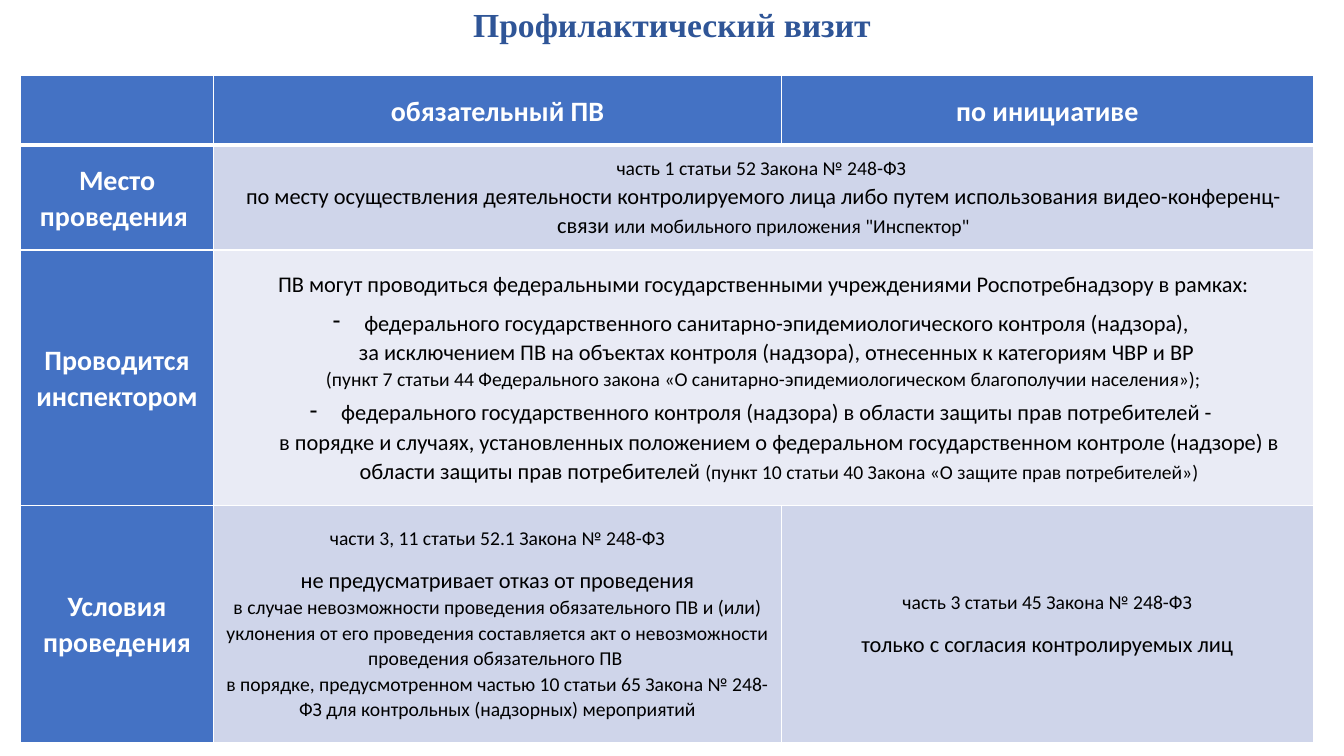
from dataclasses import dataclass, field

from lxml.etree import SubElement
from pptx import Presentation
from pptx.dml.color import RGBColor
from pptx.enum.text import MSO_ANCHOR, PP_ALIGN
from pptx.oxml.ns import qn
from pptx.util import Cm, Pt


@dataclass(frozen=True)
class Theme:
    white: str = "FFFFFF"
    blue: str = "4472C4"
    bands: tuple = ("CFD5EA", "E9EBF5")
    thin: float = 1
    thick: float = 3
    fonts: dict = field(default_factory=lambda: {
        "title": ("Times New Roman", 24, "2F5597", True),
        "head": ("Calibri", 20, "FFFFFF", True),
        "body": ("Calibri", 16, "000000", False),
        "note": ("Calibri", 14, "000000", False),
    })


@dataclass(frozen=True)
class Line:
    spans: tuple
    before: float = 0
    dash: bool = False


def head(text):
    return Line((("head", text),))


def body(text, **options):
    return Line((("body", text),), **options)


def note(text, **options):
    return Line((("note", text),), **options)


def apply(target, values):
    for name, value in values.items():
        setattr(target, name, value)


class SlideBuilder:
    def __init__(self, page, theme):
        self.page = page
        self.theme = theme

    def add_span(self, para, style, text):
        name, size, color, bold = self.theme.fonts[style]
        for index, part in enumerate(text.split("\n")):
            if index:
                para.add_line_break()
            span = para.add_run()
            span.text = part
            apply(span.font, {"name": name, "size": Pt(size), "bold": bold})
            span.font.color.rgb = RGBColor.from_string(color)

    def add_dash(self, para):
        properties = para._p.get_or_add_pPr()
        properties.set("marL", str(Cm(0.79)))
        properties.set("indent", str(Cm(-0.79)))
        SubElement(properties, qn("a:buChar")).set("char", "-")

    def add_lines(self, frame, lines, spacing):
        for index, line in enumerate(lines):
            para = frame.add_paragraph() if index else frame.paragraphs[0]
            apply(para, {"alignment": PP_ALIGN.CENTER, "line_spacing": spacing,
                         "space_before": Pt(line.before)})
            if line.dash:
                self.add_dash(para)
            for style, text in line.spans:
                self.add_span(para, style, text)

    def add_title(self, text, left, top, width, height):
        box = self.page.shapes.add_textbox(Cm(left), Cm(top), Cm(width), Cm(height))
        apply(box.text_frame, {"word_wrap": True, "vertical_anchor": MSO_ANCHOR.MIDDLE})
        self.add_lines(box.text_frame, [Line((("title", text),))], 0.9)

    def add_borders(self, cell, row):
        thin, thick = self.theme.thin, self.theme.thick
        widths = {"L": thin, "R": thin,
                  "T": thick if row == 1 else thin,
                  "B": thick if row == 0 else thin}
        properties = cell._tc.get_or_add_tcPr()
        for side, width in widths.items():
            border = SubElement(properties, qn(f"a:ln{side}"))
            border.set("w", str(Pt(width)))
            fill = SubElement(border, qn("a:solidFill"))
            SubElement(fill, qn("a:srgbClr")).set("val", self.theme.white)

    def style_cell(self, cell, row, column):
        apply(cell, {"vertical_anchor": MSO_ANCHOR.MIDDLE,
                     "margin_left": Cm(0.16), "margin_right": Cm(0.16),
                     "margin_top": 0, "margin_bottom": 0})
        self.add_borders(cell, row)
        is_header = row == 0 or column == 0
        color = self.theme.blue if is_header else self.theme.bands[(row - 1) % 2]
        cell.fill.solid()
        cell.fill.fore_color.rgb = RGBColor.from_string(color)

    def add_table(self, rows, left, top, widths, heights):
        table = self.page.shapes.add_table(
            len(heights), len(widths), Cm(left), Cm(top),
            Cm(sum(widths)), Cm(sum(heights))).table
        apply(table, {"first_row": True, "first_col": True})
        for column, width in zip(table.columns, widths):
            column.width = Cm(width)
        for row, height in zip(table.rows, heights):
            row.height = Cm(height)
        for row, contents in enumerate(rows):
            for column in range(len(widths)):
                self.style_cell(table.cell(row, column), row, column)
            for column, lines in enumerate(contents):
                self.add_lines(table.cell(row, column).text_frame, lines, 1.07)
            if len(contents) < len(widths):
                table.cell(row, len(contents) - 1).merge(table.cell(row, len(widths) - 1))


VISIT_ROWS = [
    [[], [head("обязательный ПВ")], [head("по инициативе")]],
    [
        [head("Место проведения ")],
        [
            note("часть 1 статьи 52 Закона № 248-ФЗ "),
            Line((
                ("body", "по месту осуществления деятельности контролируемого лица либо "
                         "путем использования видео-конференц-связи "),
                ("note", 'или мобильного приложения "Инспектор"'),
            )),
        ],
    ],
    [
        [head("Проводится"), head("инспектором")],
        [
            body("ПВ могут проводиться федеральными государственными учреждениями "
                 "Роспотребнадзору в рамках:"),
            body("федерального государственного санитарно-эпидемиологического контроля "
                 "(надзора), \nза исключением ПВ на объектах контроля (надзора), "
                 "отнесенных к категориям ЧВР и ВР ", before=6.5, dash=True),
            note("(пункт 7 статьи 44 Федерального закона «О санитарно-эпидемиологическом "
                 "благополучии населения»);"),
            Line((
                ("body", "федерального государственного контроля (надзора) в области защиты "
                         "прав потребителей - \nв порядке и случаях, установленных положением "
                         "о федеральном государственном контроле (надзоре) в области защиты "
                         "прав потребителей "),
                ("note", "(пункт 10 статьи 40 Закона «О защите прав потребителей»)"),
            ), before=4, dash=True),
        ],
    ],
    [
        [head("Условия проведения")],
        [
            note("части 3, 11 статьи 52.1 Закона № 248-ФЗ"),
            body("не предусматривает отказ от проведения", before=10.5),
            note("в случае невозможности проведения обязательного ПВ и (или) уклонения от "
                 "его проведения составляется акт о невозможности проведения "
                 "обязательного ПВ "),
            note("в порядке, предусмотренном частью 10 статьи 65 Закона № 248-ФЗ для "
                 "контрольных (надзорных) мероприятий"),
        ],
        [
            note("часть 3 статьи 45 Закона № 248-ФЗ"),
            body("только с согласия контролируемых лиц", before=10.5),
        ],
    ],
]


def main():
    deck = Presentation()
    apply(deck, {"slide_width": Cm(33.87), "slide_height": Cm(19.05)})
    page = deck.slides.add_slide(deck.slide_layouts[6])
    builder = SlideBuilder(page, Theme())
    builder.add_title("Профилактический визит", 0, 0, 33.87, 1.35)
    builder.add_table(VISIT_ROWS, 0.51, 1.91,
                      widths=(4.88, 14.3, 13.41), heights=(1.75, 2.64, 6.43, 5.97))
    deck.save("out.pptx")


if __name__ == "__main__":
    main()
